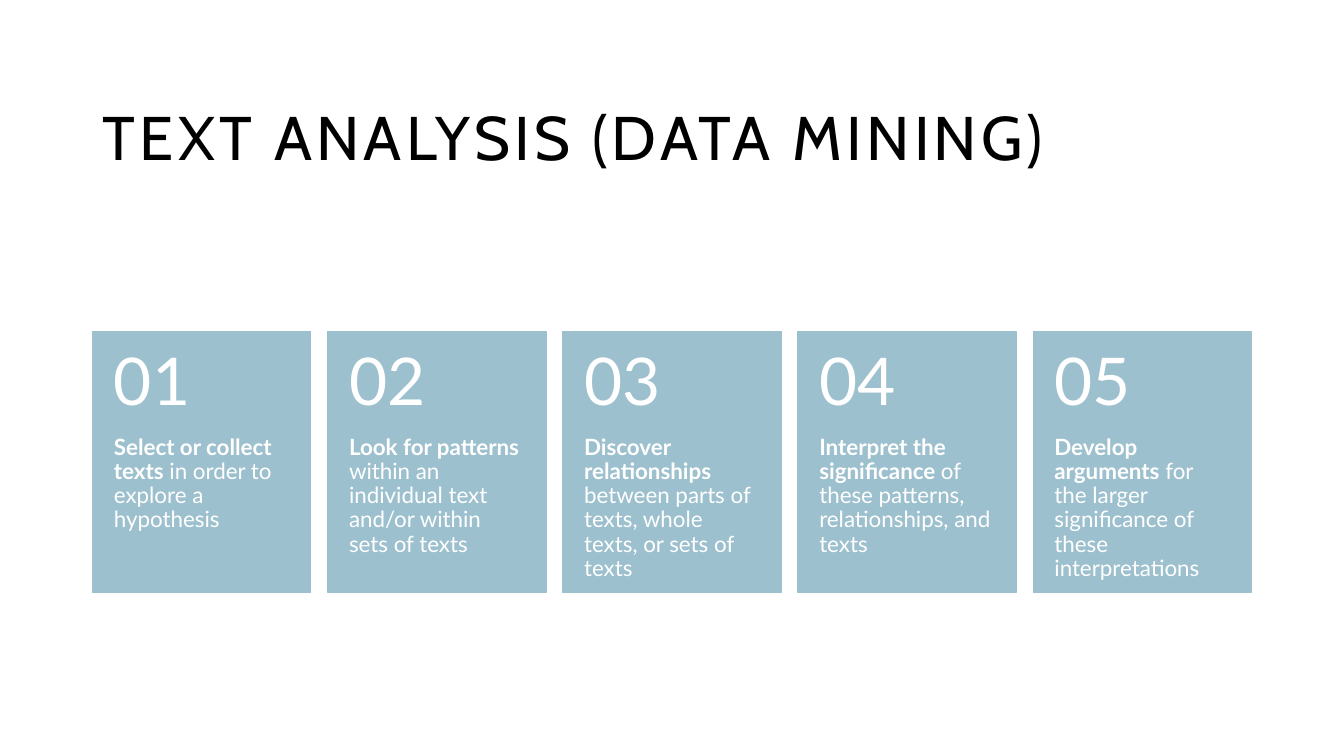
from dataclasses import dataclass

from pptx import Presentation
from pptx.dml.color import RGBColor
from pptx.enum.shapes import MSO_SHAPE
from pptx.enum.text import MSO_ANCHOR, MSO_AUTO_SIZE, PP_ALIGN
from pptx.util import Inches, Pt


@dataclass(frozen=True)
class Theme:
    card: RGBColor = RGBColor(0x9D, 0xC0, 0xCE)
    title_color: RGBColor = RGBColor(0, 0, 0)
    card_text: RGBColor = RGBColor(0xFF, 0xFF, 0xFF)
    title_font: str = "Cabin"
    body_font: str = "Lato"
    title_size: int = 44
    number_size: int = 47
    body_size: int = 16
    title_tracking: int = 300
    line_spacing: float = 0.9


@dataclass(frozen=True)
class Box:
    left: float
    top: float
    width: float
    height: float

    def emu(self):
        return [Inches(length) for length in
                (self.left, self.top, self.width, self.height)]


THEME = Theme()
SLIDE_WIDTH, SLIDE_HEIGHT = 13.33, 7.5
TITLE_BOX = Box(0.92, 0.4, 11.5, 1.99)
STEPS_BOX = Box(0.92, 3.29, 11.49, 2.59)
CARD_GAP = 0.17
NUMBER_SHARE = 0.4
SIDE_INSET = 0.21

TITLE = "TEXT ANALYSIS (DATA MINING)"
STEPS = [
    ("Select or collect texts", " in order to explore a hypothesis"),
    ("Look for patterns ", "within an individual text and/or within sets of texts"),
    ("Discover relationships", " between parts of texts, whole texts, or sets of texts"),
    ("Interpret the significance ", "of these patterns, relationships, and texts"),
    ("Develop arguments", " for the larger significance of these interpretations"),
]


def set_attributes(target, values):
    for name, value in values.items():
        setattr(target, name, value)


def fill_text(shape, runs, font, frame):
    """Write (text, bold) runs as one left-aligned paragraph."""
    text_frame = shape.text_frame
    set_attributes(text_frame, {"word_wrap": True,
                                "auto_size": MSO_AUTO_SIZE.NONE, **frame})
    paragraph = text_frame.paragraphs[0]
    set_attributes(paragraph, {"alignment": PP_ALIGN.LEFT,
                               "line_spacing": THEME.line_spacing})
    color = font["color"]
    values = {name: value for name, value in font.items() if name != "color"}
    for text, bold in runs:
        run = paragraph.add_run()
        run.text = text
        set_attributes(run.font, {**values, "bold": bold})
        run.font.color.rgb = color
    return paragraph


def add_title(slide, box):
    title = slide.shapes.title
    title.left, title.top, title.width, title.height = box.emu()
    font = {"name": THEME.title_font, "size": Pt(THEME.title_size),
            "color": THEME.title_color}
    paragraph = fill_text(title, [(TITLE, False)], font,
                          {"vertical_anchor": MSO_ANCHOR.MIDDLE})
    for run in paragraph.runs:
        run.font._element.set("spc", str(THEME.title_tracking))


def add_card(slide, box, number, heading, detail):
    group = slide.shapes.add_group_shape()
    card = group.shapes.add_shape(MSO_SHAPE.RECTANGLE, *box.emu())
    card.shadow.inherit = False
    card.fill.solid()
    card.fill.fore_color.rgb = THEME.card
    card.line.color.rgb = THEME.card
    card.line.width = Pt(1)

    number_height = box.height * NUMBER_SHARE
    number_box = Box(box.left, box.top, box.width, number_height)
    body_box = Box(box.left, box.top + number_height,
                   box.width, box.height - number_height)
    parts = [
        (body_box, [(heading, True), (detail, False)], THEME.body_size,
         MSO_ANCHOR.TOP, 0, 0.36),
        (number_box, [(f"{number:02}", False)], THEME.number_size,
         MSO_ANCHOR.MIDDLE, 0.18, 0.18),
    ]
    for part_box, runs, size, anchor, top, bottom in parts:
        font = {"name": THEME.body_font, "size": Pt(size),
                "color": THEME.card_text}
        frame = {"vertical_anchor": anchor,
                 "margin_left": Inches(SIDE_INSET),
                 "margin_right": Inches(SIDE_INSET),
                 "margin_top": Inches(top), "margin_bottom": Inches(bottom)}
        fill_text(group.shapes.add_textbox(*part_box.emu()), runs, font, frame)


def add_steps(slide, box):
    width = (box.width - CARD_GAP * (len(STEPS) - 1)) / len(STEPS)
    for index, (heading, detail) in enumerate(STEPS):
        left = box.left + index * (width + CARD_GAP)
        add_card(slide, Box(left, box.top, width, box.height),
                 index + 1, heading, detail)


def main():
    presentation = Presentation()
    presentation.slide_width = Inches(SLIDE_WIDTH)
    presentation.slide_height = Inches(SLIDE_HEIGHT)
    title_only = presentation.slide_layouts.get_by_name("Title Only")
    slide = presentation.slides.add_slide(title_only)
    add_title(slide, TITLE_BOX)
    add_steps(slide, STEPS_BOX)
    presentation.save("out.pptx")


if __name__ == "__main__":
    main()
